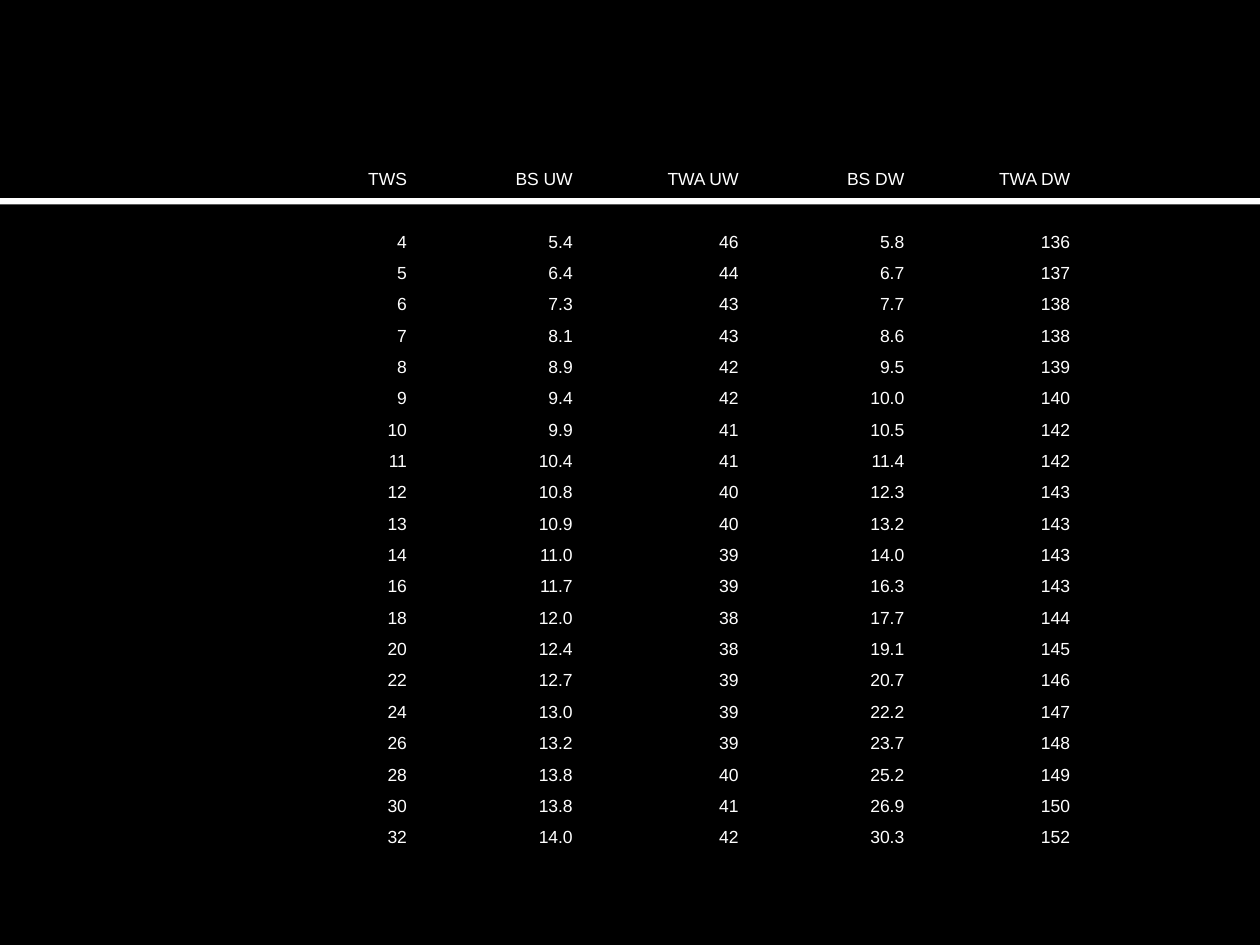
from dataclasses import astuple, dataclass

from lxml import etree
from pptx import Presentation
from pptx.dml.color import RGBColor
from pptx.enum.shapes import MSO_SHAPE
from pptx.enum.text import MSO_ANCHOR, PP_ALIGN
from pptx.oxml.ns import qn
from pptx.slide import Slide
from pptx.table import Table, _Cell
from pptx.util import Cm, Pt

RECTANGLE = MSO_SHAPE.RECTANGLE
BOTTOM = MSO_ANCHOR.BOTTOM
RIGHT = PP_ALIGN.RIGHT
NO_STYLE_NO_GRID = "{2D5ABB26-0587-4C30-8999-92F81FD0307C}"
BLACK = "000000"
WHITE = "FFFFFF"
FONT = "Arial"
FONT_SIZE = 10
SLIDE_WIDTH = 25.4
SLIDE_HEIGHT = 19.05
HEADER_HEIGHT = 3.99


@dataclass
class Band:
    top: float
    height: float
    color: str


@dataclass
class PolarRow:
    wind_speed: str = ""
    upwind_speed: str = ""
    upwind_angle: str = ""
    downwind_speed: str = ""
    downwind_angle: str = ""


BANDS = [
    Band(HEADER_HEIGHT, 0.13, WHITE),
    Band(0, HEADER_HEIGHT, BLACK),
]

POLAR_ROWS = [
    PolarRow("TWS", "BS UW", "TWA UW", "BS DW", "TWA DW"),
    PolarRow(),
    PolarRow("4", "5.4", "46", "5.8", "136"),
    PolarRow("5", "6.4", "44", "6.7", "137"),
    PolarRow("6", "7.3", "43", "7.7", "138"),
    PolarRow("7", "8.1", "43", "8.6", "138"),
    PolarRow("8", "8.9", "42", "9.5", "139"),
    PolarRow("9", "9.4", "42", "10.0", "140"),
    PolarRow("10", "9.9", "41", "10.5", "142"),
    PolarRow("11", "10.4", "41", "11.4", "142"),
    PolarRow("12", "10.8", "40", "12.3", "143"),
    PolarRow("13", "10.9", "40", "13.2", "143"),
    PolarRow("14", "11.0", "39", "14.0", "143"),
    PolarRow("16", "11.7", "39", "16.3", "143"),
    PolarRow("18", "12.0", "38", "17.7", "144"),
    PolarRow("20", "12.4", "38", "19.1", "145"),
    PolarRow("22", "12.7", "39", "20.7", "146"),
    PolarRow("24", "13.0", "39", "22.2", "147"),
    PolarRow("26", "13.2", "39", "23.7", "148"),
    PolarRow("28", "13.8", "40", "25.2", "149"),
    PolarRow("30", "13.8", "41", "26.9", "150"),
    PolarRow("32", "14.0", "42", "30.3", "152"),
]


def paint(fill, color: str) -> None:
    fill.solid()
    fill.fore_color.rgb = RGBColor.from_string(color)


def draw_band(slide: Slide, band: Band) -> None:
    box = slide.shapes.add_shape(
        RECTANGLE, Cm(0), Cm(band.top), Cm(SLIDE_WIDTH), Cm(band.height)
    )
    box.shadow.inherit = False
    box.line.fill.background()
    paint(box.fill, band.color)


def fill_cell(cell: _Cell, text: str) -> None:
    cell.fill.background()
    cell.vertical_anchor = BOTTOM
    cell.margin_left = cell.margin_right = cell.margin_top = Cm(0.02)
    cell.margin_bottom = Cm(0)
    cell.text_frame.text = text
    para = cell.text_frame.paragraphs[0]
    para.alignment = RIGHT
    for span in para.runs:
        span.font.name = FONT
        span.font.size = Pt(FONT_SIZE)
        paint(span.font.fill, WHITE)
    if not text:
        etree.SubElement(para._p, qn("a:endParaRPr"), sz=str(FONT_SIZE * 100))


def clear_style(table: Table) -> None:
    table.first_row = False
    table.horz_banding = False
    table._tbl.tblPr.find(qn("a:tableStyleId")).text = NO_STYLE_NO_GRID


def draw_polar_table(slide: Slide, rows: list[PolarRow]) -> None:
    table = slide.shapes.add_table(
        len(rows), len(astuple(rows[0])), Cm(4.88), Cm(3.18), Cm(16.71), Cm(13.92)
    ).table
    clear_style(table)
    for table_row, polar_row in zip(table.rows, rows):
        for cell, text in zip(table_row.cells, astuple(polar_row)):
            fill_cell(cell, text)


def main() -> None:
    deck = Presentation()
    deck.slide_width = Cm(SLIDE_WIDTH)
    deck.slide_height = Cm(SLIDE_HEIGHT)
    slide = deck.slides.add_slide(deck.slide_layouts[6])
    paint(slide.background.fill, BLACK)
    for band in BANDS:
        draw_band(slide, band)
    draw_polar_table(slide, POLAR_ROWS)
    deck.save("out.pptx")


if __name__ == "__main__":
    main()
